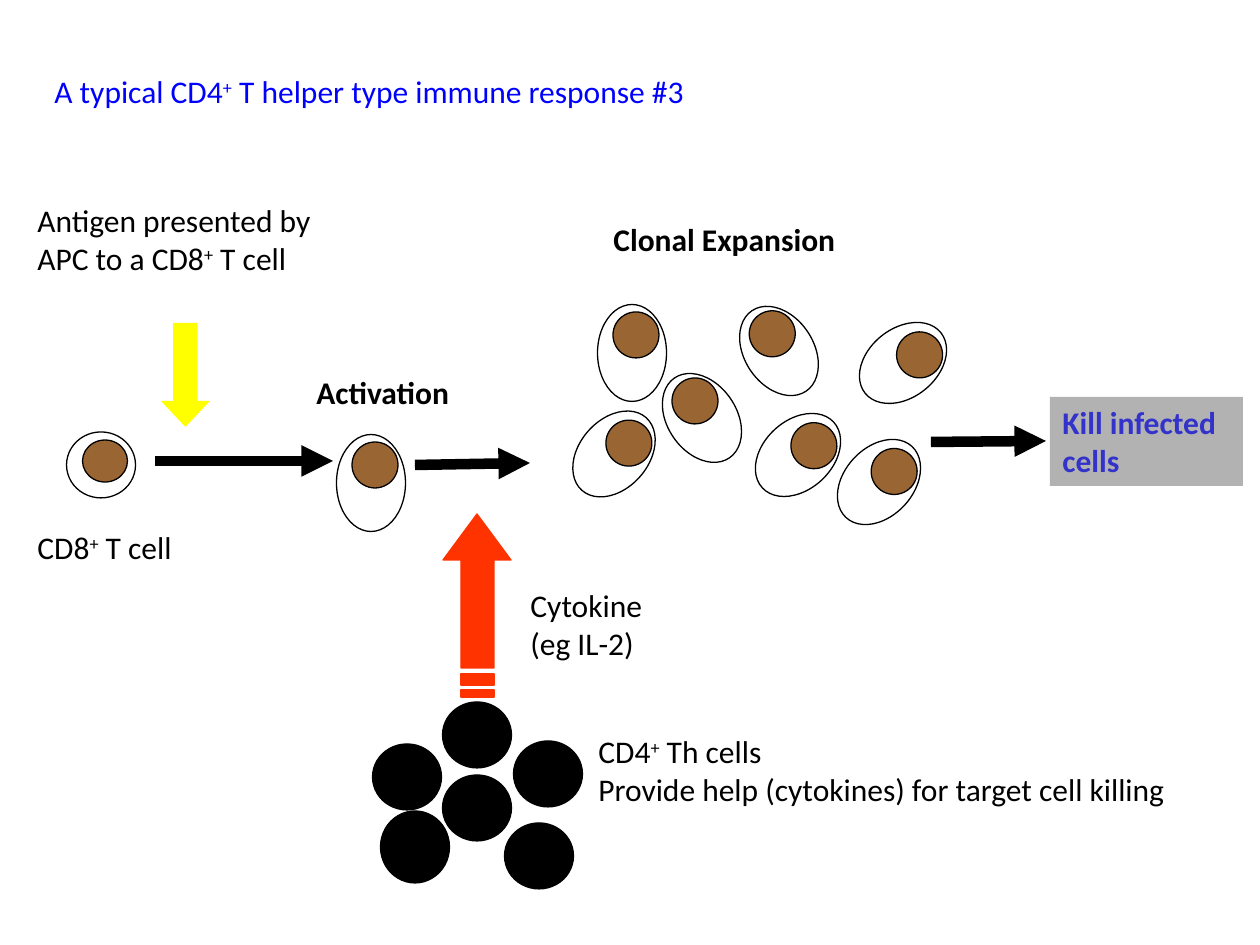
import math

import pptx
import pptx.dml.color
import pptx.enum.shapes
import pptx.enum.text
import pptx.oxml
import pptx.oxml.ns
import pptx.util

RGB = pptx.dml.color.RGBColor
SHAPE = pptx.enum.shapes.MSO_SHAPE
PX = 914400 // 126

BLACK = RGB(0x00, 0x00, 0x00)
BLUE = RGB(0x00, 0x00, 0xFF)
INDIGO = RGB(0x33, 0x33, 0xCC)
BROWN = RGB(0x99, 0x66, 0x33)
YELLOW = RGB(0xFF, 0xFF, 0x00)
RED = RGB(0xFF, 0x33, 0x00)
GREY = RGB(0xB2, 0xB2, 0xB2)

# box (left, top, width, height), lines, format; each "+" is a superscript
LABELS = [
    ((42, 66, 664, 50), ["A typical CD4+ T helper type immune response #3"],
     dict(color=BLUE, wrap=False)),
    ((25, 195, 417, 89), ["Antigen presented by", "APC to a CD8+ T cell"], {}),
    ((518, 580, 146, 89), ["Cytokine", "(eg IL-2)"], dict(wrap=False)),
    ((304, 367, 160, 50), ["Activation"], dict(bold=True, wrap=False)),
    ((586, 726, 698, 89),
     ["CD4+ Th cells", "Provide help (cytokines) for target cell killing"], {}),
    ((601, 214, 248, 50), ["Clonal Expansion"], dict(bold=True, wrap=False)),
    ((25, 522, 168, 50), ["CD8+ T cell"], dict(wrap=False)),
]
OUTCOME = ((1050, 397, 193, 89), ["Kill infected cells"])

# centre x, centre y, rotation
ACTIVATED_CELLS = [
    (371, 483, 0), (903, 363, 51.4), (879, 482, 42.9), (798, 455, 47.3),
    (614, 454, 41.4), (702, 418, 325.3), (779, 351, 326.2), (632, 353, 0),
]
ACTIVATED = dict(body=(69, 97), nucleus=(46, 46), offset=(4, -18))
NAIVE_CELL = (101, 465, 0)
NAIVE = dict(body=(69, 66), nucleus=(45, 42), offset=(4, -4))

# centre x, centre y, size
HELPER_SIZE = (69, 66)
HELPER_CELLS = [
    (415, 847, (69, 72)), (539, 856, HELPER_SIZE), (548, 774, HELPER_SIZE),
    (407, 777, HELPER_SIZE), (477, 808, HELPER_SIZE), (477, 735, HELPER_SIZE),
]

STEPS = [((155, 461), (333, 461)), ((415, 465), (530, 463)),
         ((931, 442), (1046, 441))]
ANTIGEN_ARROW = (161, 323, 49, 104)
CYTOKINE_HEAD = [(443, 560), (461, 560), (461, 668), (494, 668),
                 (494, 560), (511, 560), (477, 514)]
CYTOKINE_STRIPES = [(674, 685), (690, 697)]


def emu(lengths):
    return [round(v * PX) for v in lengths]


def paint(sp, fill=None, line=None):
    sp.shadow.inherit = False
    if fill is None:
        sp.fill.background()
    else:
        sp.fill.solid()
        sp.fill.fore_color.rgb = fill
    if line is None:
        sp.line.fill.background()
    else:
        sp.line.color.rgb = line
        sp.line.width = pptx.util.Pt(0.75)
    return sp


def write(sp, lines, color=BLACK, bold=False, wrap=True):
    tf = sp.text_frame
    tf.word_wrap = wrap
    tf.auto_size = pptx.enum.text.MSO_AUTO_SIZE.SHAPE_TO_FIT_TEXT
    tf.vertical_anchor = pptx.enum.text.MSO_ANCHOR.TOP
    for i, line in enumerate(lines):
        p = tf.paragraphs[0] if i == 0 else tf.add_paragraph()
        p.alignment = pptx.enum.text.PP_ALIGN.LEFT
        for part in line.replace("+", "|+|").split("|"):
            r = p.add_run()
            r.text = part
            r.font.name = "Calibri"
            r.font.size = pptx.util.Pt(18)
            r.font.bold = bold
            r.font.color.rgb = color
            if part == "+":
                r.font.bold = False
                r._r.get_or_add_rPr().set("baseline", "30000")


def add_ellipse(shapes, cx, cy, size, fill=None, rotation=0):
    w, h = size
    sp = shapes.add_shape(SHAPE.OVAL, *emu((cx - w / 2, cy - h / 2, w, h)))
    sp.rotation = rotation
    return paint(sp, fill, BLACK)


def add_cell(s, cx, cy, rotation, body, nucleus, offset):
    """Group a nucleus and an open body; the offset turns with the cell."""
    a = math.radians(rotation)
    dx, dy = offset
    nx = cx + dx * math.cos(a) - dy * math.sin(a)
    ny = cy + dx * math.sin(a) + dy * math.cos(a)
    group = s.shapes.add_group_shape()
    add_ellipse(group.shapes, nx, ny, nucleus, BROWN, rotation)
    add_ellipse(group.shapes, cx, cy, body, None, rotation)


def add_step(s, start, end):
    line = s.shapes.add_connector(
        pptx.enum.shapes.MSO_CONNECTOR.STRAIGHT, *emu(start + end))
    line.line.color.rgb = BLACK
    line.line.width = pptx.util.Pt(6)
    ns = pptx.oxml.ns.nsdecls("a")
    line.line._get_or_add_ln().append(
        pptx.oxml.parse_xml(f'<a:tailEnd {ns} type="triangle"/>'))
    line._element.spPr.append(pptx.oxml.parse_xml(f"<a:effectLst {ns}/>"))


def add_cytokine_arrow(s):
    left, right = CYTOKINE_HEAD[1][0], CYTOKINE_HEAD[3][0]
    outlines = [CYTOKINE_HEAD] + [
        [(left, bottom), (right, bottom), (right, top), (left, top)]
        for top, bottom in CYTOKINE_STRIPES]
    builder = s.shapes.build_freeform(*outlines[0][0], scale=PX)
    for i, points in enumerate(outlines):
        if i:
            builder.move_to(*points[0])
        builder.add_line_segments(points[1:], close=True)
    paint(builder.convert_to_shape(), RED, RED)


def main():
    prs = pptx.Presentation()
    prs.slide_width = pptx.util.Inches(10)
    prs.slide_height = pptx.util.Inches(7.5)
    s = prs.slides.add_slide(prs.slide_layouts[6])

    for cx, cy, size in HELPER_CELLS:
        add_ellipse(s.shapes, cx, cy, size, BLACK)
    add_cell(s, *NAIVE_CELL, **NAIVE)
    for cell in ACTIVATED_CELLS:
        add_cell(s, *cell, **ACTIVATED)

    arrow = s.shapes.add_shape(SHAPE.DOWN_ARROW, *emu(ANTIGEN_ARROW))
    arrow.adjustments[1] = 0.53
    paint(arrow, YELLOW)
    add_cytokine_arrow(s)
    for start, end in STEPS:
        add_step(s, start, end)

    for box, lines, style in LABELS:
        write(s.shapes.add_textbox(*emu(box)), lines, **style)
    box, lines = OUTCOME
    outcome = paint(s.shapes.add_shape(SHAPE.RECTANGLE, *emu(box)), GREY)
    write(outcome, lines, color=INDIGO, bold=True)

    prs.save("out.pptx")


if __name__ == "__main__":
    main()
